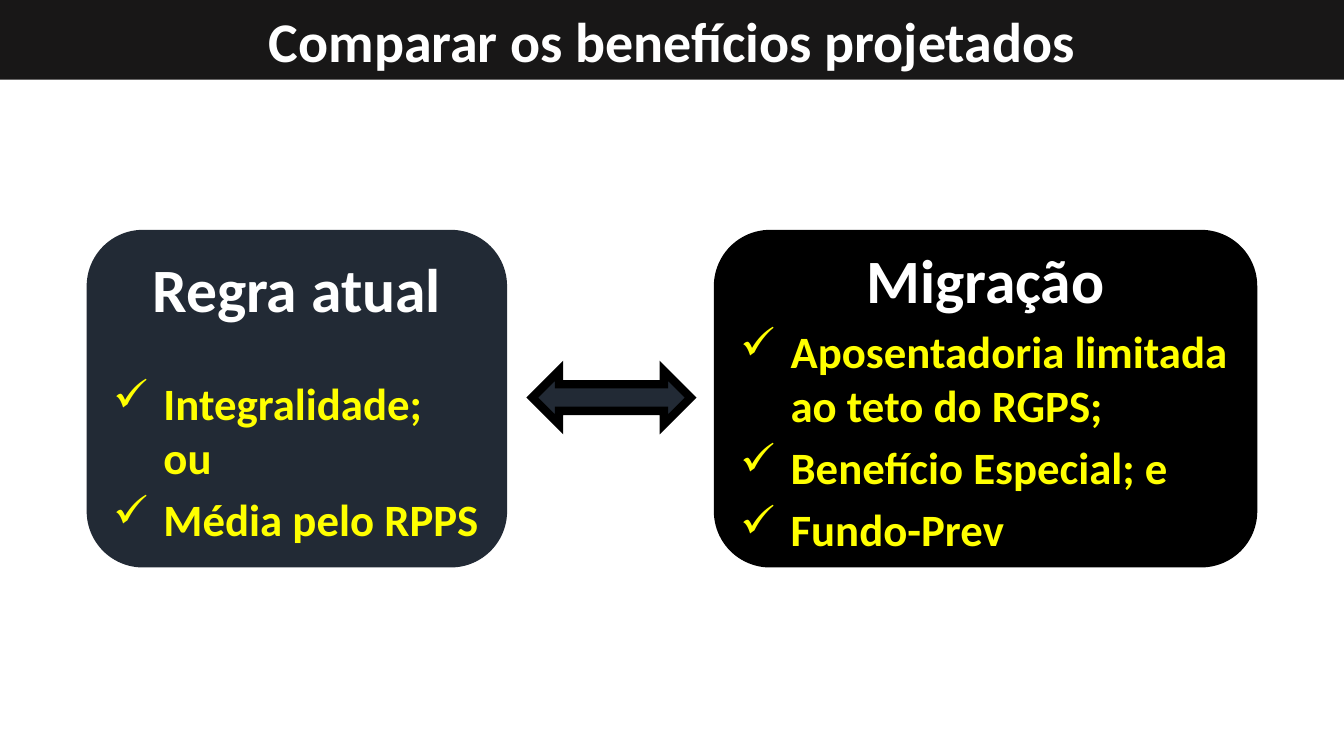
import lxml.etree
import pptx
import pptx.dml.color
import pptx.enum.shapes
import pptx.enum.text
import pptx.oxml.ns
import pptx.util

Inches = pptx.util.Inches
Pt = pptx.util.Pt
SHAPES = pptx.enum.shapes.MSO_SHAPE
ANCHOR = pptx.enum.text.MSO_ANCHOR
ALIGN = pptx.enum.text.PP_ALIGN

COLORS = {
    "bar": "181717",
    "navy": "222A35",
    "black": "000000",
    "white": "FFFFFF",
    "yellow": "FFFF00",
}
TEXT_FORMATS = {
    "title": {"size": Pt(40), "name": "Calibri", "bold": True},
    "heading": {"size": Pt(44), "name": "Calibri", "bold": True},
    "item": {"size": Pt(32), "name": "Calibri", "bold": True},
}
CARD_TOP, CARD_HEIGHT = 2.28, 3.35


def get_color(name):
    """Return the named colour."""
    return pptx.dml.color.RGBColor.from_string(COLORS[name])


def set_fill(shape, color):
    """Fill a shape with one named colour."""
    shape.fill.solid()
    shape.fill.fore_color.rgb = get_color(color)


def add_text(paragraph, text, style, color):
    """Add a run in one of the text formats."""
    run = paragraph.add_run()
    run.text = text
    for attribute, value in TEXT_FORMATS[style].items():
        setattr(run.font, attribute, value)
    run.font.color.rgb = get_color(color)


def add_check_bullet(paragraph):
    """Give a paragraph a check mark with a hanging indent."""
    properties = paragraph._p.get_or_add_pPr()
    properties.set("marL", str(Inches(0.5)))
    properties.set("indent", str(-Inches(0.5)))
    bullet = lxml.etree.SubElement(properties, pptx.oxml.ns.qn("a:buChar"))
    bullet.set("char", "✓")


def add_shape(slide, kind, box, color):
    """Add a filled preset shape without line or shadow."""
    shape = slide.shapes.add_shape(kind, *map(Inches, box))
    shape.shadow.inherit = False
    set_fill(shape, color)
    shape.line.fill.background()
    return shape


def add_title_bar(slide, box, text):
    """Turn the title placeholder into the bar across the top."""
    title = slide.shapes.title
    title.left, title.top, title.width, title.height = map(Inches, box)
    set_fill(title, "bar")
    frame = title.text_frame
    frame.auto_size = pptx.enum.text.MSO_AUTO_SIZE.NONE
    frame.vertical_anchor = ANCHOR.MIDDLE
    paragraph = frame.paragraphs[0]
    paragraph.alignment = ALIGN.CENTER
    add_text(paragraph, text, "title", "white")


def add_card(slide, box, color, heading, items, anchor, heading_gap):
    """Add a rounded card with a heading and a checked list."""
    frame = add_shape(slide, SHAPES.ROUNDED_RECTANGLE, box, color).text_frame
    frame.word_wrap = True
    frame.vertical_anchor = anchor
    paragraph = frame.paragraphs[0]
    paragraph.alignment = ALIGN.CENTER
    paragraph.space_after = Pt(heading_gap)
    add_text(paragraph, heading, "heading", "white")
    for item in items:
        paragraph = frame.add_paragraph()
        add_check_bullet(paragraph)
        paragraph.alignment = ALIGN.LEFT
        paragraph.space_after = Pt(6)
        add_text(paragraph, item, "item", "yellow")


def add_comparison_arrow(slide, box):
    """Add the double arrow with a thick, sharp-cornered outline."""
    arrow = add_shape(slide, SHAPES.LEFT_RIGHT_ARROW, box, "navy")
    arrow.line.color.rgb = get_color("black")
    arrow.line.width = Pt(6)
    outline = arrow.line._get_or_add_ln()
    miter = lxml.etree.SubElement(outline, pptx.oxml.ns.qn("a:miter"))
    miter.set("lim", "800000")


def main():
    """Build and save the comparison slide."""
    presentation = pptx.Presentation()
    presentation.slide_width = Inches(13.33)
    presentation.slide_height = Inches(7.5)
    slide = presentation.slides.add_slide(presentation.slide_layouts[5])
    add_title_bar(slide, (-0.01, 0, 13.35, 0.79), "Comparar os benefícios projetados")
    add_card(
        slide, (0.86, CARD_TOP, 4.17, CARD_HEIGHT), "navy", "Regra atual",
        ["Integralidade; ou", "Média pelo RPPS"], ANCHOR.TOP, 36,
    )
    add_card(
        slide, (7.08, CARD_TOP, 5.39, CARD_HEIGHT), "black", "Migração",
        ["Aposentadoria limitada ao teto do RGPS;", "Benefício Especial; e", "Fundo-Prev"],
        ANCHOR.MIDDLE, 6,
    )
    add_comparison_arrow(slide, (5.28, 3.68, 1.57, 0.53))
    presentation.save("out.pptx")


if __name__ == "__main__":
    main()
